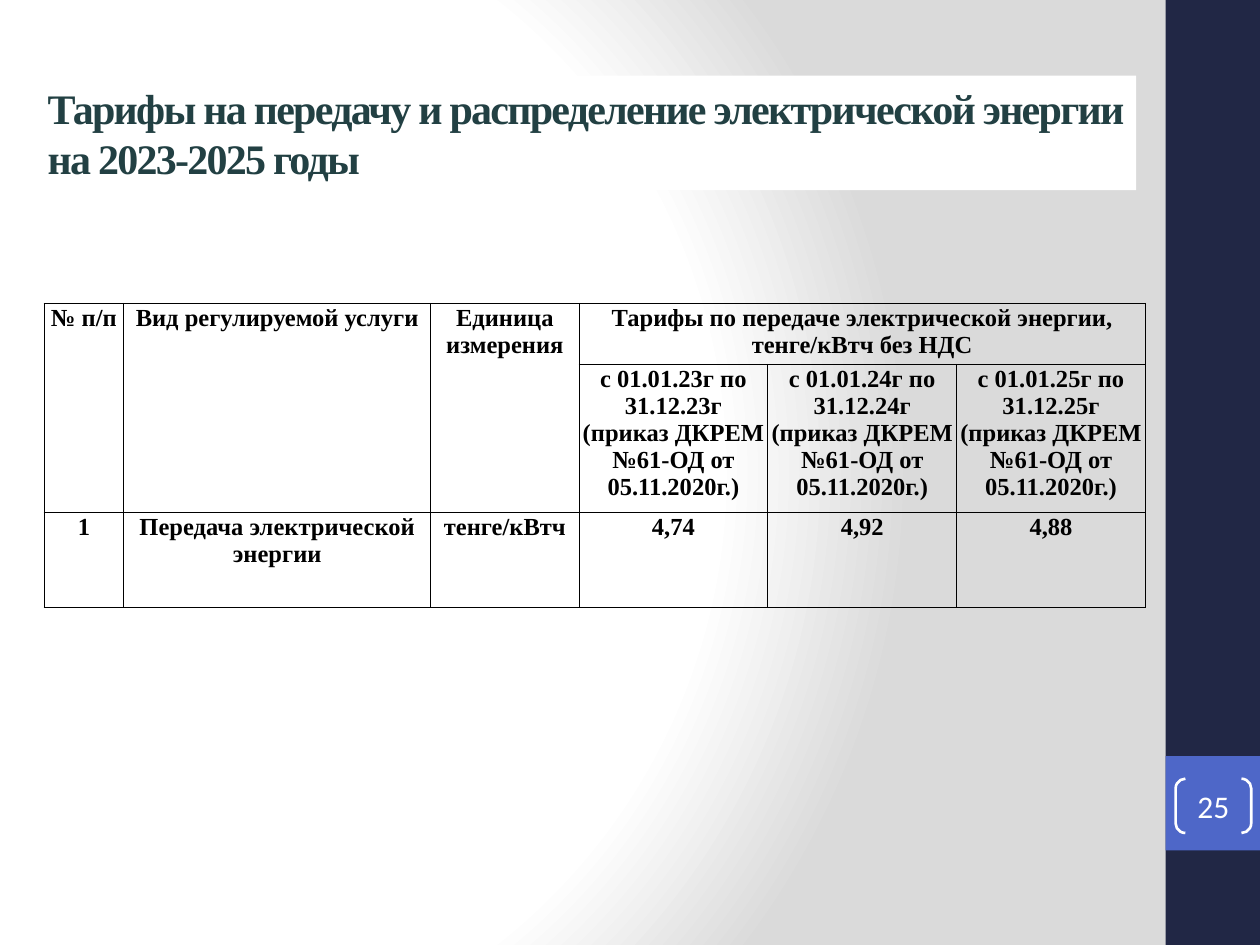
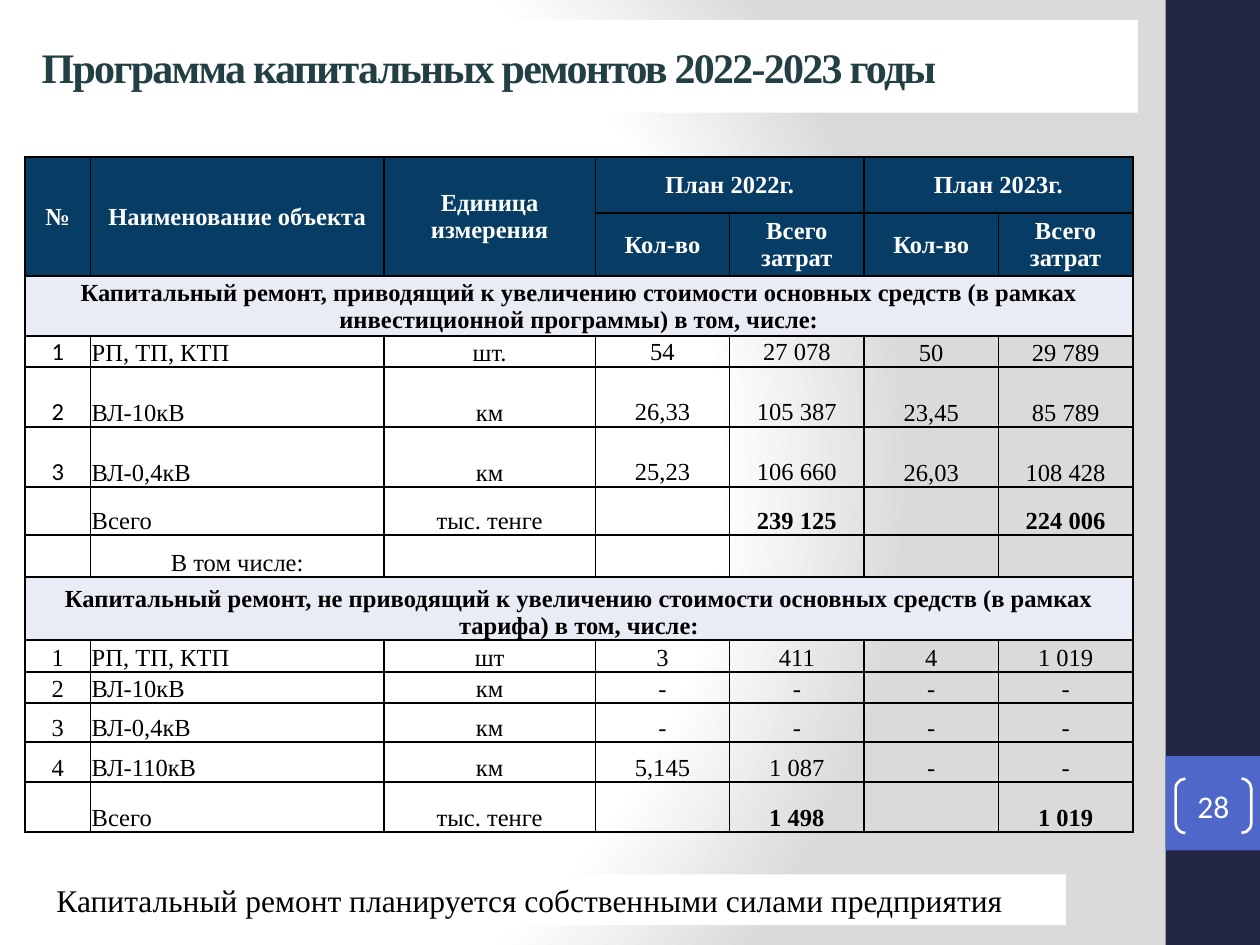
from dataclasses import dataclass

from lxml import etree
from pptx import Presentation
from pptx.dml.color import RGBColor
from pptx.enum.shapes import MSO_SHAPE as Shape
from pptx.enum.text import MSO_ANCHOR as Anchor, MSO_AUTO_SIZE as AutoSize, PP_ALIGN as Align
from pptx.oxml import parse_xml
from pptx.oxml.ns import nsdecls, qn
from pptx.util import Pt


@dataclass(frozen=True)
class Theme:
    serif: str = "Times New Roman"
    sans: str = "Calibri"
    title_size: int = 24
    note_size: int = 18
    table_size: int = 14
    white: str = "FFFFFF"
    black: str = "000000"
    grey: str = "DADADA"
    title: str = "224043"
    band: str = "212745"
    badge: str = "4E67C8"
    header: str = "073C65"
    section: str = "E9EBF5"


THEME = Theme()
TITLE_ONLY = 5


def apply(target, **values):
    for name, value in values.items():
        setattr(target, name, value)


def write(frame, text, size, color=THEME.black, font=THEME.serif, bold=False, align=Align.LEFT):
    para = frame.paragraphs[0]
    para.alignment = align
    span = para.add_run()
    span.text = text
    apply(span.font, name=font, size=Pt(size), bold=bold)
    span.font.color.rgb = RGBColor.from_string(color)
    return span


def paint(shape, color):
    shape.fill.solid()
    shape.fill.fore_color.rgb = RGBColor.from_string(color)


def place(shape, box):
    apply(shape, **dict(zip(("left", "top", "width", "height"), map(Pt, box))))


def set_background(master):
    """Give the master a circular gradient, white fading to grey on the right."""
    master.background.fill.solid()
    holder = master.element.find(".//" + qn("p:bgPr"))
    stops = ((0, THEME.white), (75, THEME.white), (100, THEME.grey))
    stop_xml = "".join(
        f'<a:gs pos="{position * 1000}"><a:srgbClr val="{color}"/></a:gs>'
        for position, color in stops)
    holder.replace(holder[0], parse_xml(
        f'<a:gradFill {nsdecls("a")} rotWithShape="1"><a:gsLst>{stop_xml}</a:gsLst>'
        '<a:path path="circle"><a:fillToRect l="20000" t="50000" r="100000" b="50000"/>'
        '</a:path></a:gradFill>'))


def add_side_band(page, number, box=(666, 0, 54, 540)):
    left, top, width, height = box
    badge_top = top + 0.8 * height
    for color, part in ((THEME.band, box), (THEME.badge, (left, badge_top, width, width))):
        panel = page.shapes.add_shape(Shape.RECTANGLE, *map(Pt, part))
        panel.shadow.inherit = False
        panel.line.fill.background()
        paint(panel, color)
    bracket = page.shapes.add_shape(
        Shape.DOUBLE_BRACKET, Pt(left + 5.8), Pt(badge_top + 13), Pt(43.2), Pt(31))
    bracket.shadow.inherit = False
    bracket.adjustments[0] = 0.18
    bracket.fill.background()
    bracket.line.color.rgb = RGBColor.from_string(THEME.white)
    bracket.line.width = Pt(1.5)
    frame = bracket.text_frame
    apply(frame, margin_left=0, margin_right=0, margin_top=0, margin_bottom=0,
          vertical_anchor=Anchor.MIDDLE)
    write(frame, number, THEME.note_size, THEME.white, THEME.sans, align=Align.CENTER)


def start_page(deck, title, title_box, number):
    page = deck.slides.add_slide(deck.slide_layouts[TITLE_ONLY])
    heading = page.shapes.title
    place(heading, title_box)
    paint(heading, THEME.white)
    apply(heading.text_frame, word_wrap=True, auto_size=AutoSize.NONE,
          vertical_anchor=Anchor.MIDDLE)
    span = write(heading.text_frame, title, THEME.title_size, THEME.title, bold=True)
    span.font._element.set("spc", "-100")
    add_side_band(page, number)
    return page


def add_borders(cell, width):
    properties = cell._tc.get_or_add_tcPr()
    for index, side in enumerate(("lnL", "lnR", "lnT", "lnB")):
        line = etree.Element(qn(f"a:{side}"), w=str(Pt(width)))
        fill = etree.SubElement(line, qn("a:solidFill"))
        etree.SubElement(fill, qn("a:srgbClr"), val=THEME.black)
        properties.insert(index, line)


def add_grid(page, corner, columns, heights, records, spans, border, style_of):
    """Draw a bordered table; style_of(row, column) gives each cell's format values."""
    box = (*corner, sum(columns), sum(heights))
    table = page.shapes.add_table(len(heights), len(columns), *map(Pt, box)).table
    apply(table, first_row=False, horz_banding=False)
    for column, width in zip(table.columns, columns):
        column.width = Pt(width)
    for row, height in zip(table.rows, heights):
        row.height = Pt(height)
    for r, record in enumerate(records):
        for c, text in enumerate(record):
            cell = table.cell(r, c)
            style = {"align": Align.CENTER, **style_of(r, c)}
            apply(cell, margin_left=Pt(0.72), margin_right=Pt(0.72), margin_bottom=0,
                  margin_top=Pt(style.pop("inset", 0.72)),
                  vertical_anchor=style.pop("anchor", Anchor.TOP))
            fill = style.pop("fill", None)
            if fill:
                paint(cell, fill)
            else:
                cell.fill.background()
            add_borders(cell, border)
            if text:
                write(cell.text_frame, text, THEME.table_size, **style)
    for top, left, bottom, right in spans:
        table.cell(top, left).merge(table.cell(bottom, right))


def build_tariffs(deck):
    page = start_page(
        deck, "Тарифы на передачу и распределение электрической энергии на 2023-2025 годы",
        (20, 43.2, 629.3, 65.5), "25")
    periods = [f"с 01.01.{year}г по 31.12.{year}г (приказ ДКРЕМ №61-ОД от 05.11.2020г.)"
               for year in (23, 24, 25)]
    records = [
        ["№ п/п", "Вид регулируемой услуги", "Единица измерения",
         "Тарифы по передаче электрической энергии, тенге/кВтч без НДС", "", ""],
        ["", "", "", *periods],
        ["1", "Передача электрической энергии", "тенге/кВтч", "4,74", "4,92", "4,88"],
    ]
    spans = [(0, column, 1, column) for column in range(3)] + [(0, 3, 0, 5)]
    add_grid(page, (25.2, 173.3), [45.5, 175.5, 84.7] + [107.9] * 3, [34.8, 84.5, 54.4],
             records, spans, 0.5, lambda row, column: {"bold": True})


def repair_style(row, column):
    """Format values for one cell of the repair programme."""
    if row < 2:
        return {"fill": THEME.header, "color": THEME.white, "bold": True,
                "anchor": Anchor.MIDDLE}
    if row in (2, 8):
        return {"fill": THEME.section, "bold": True,
                "anchor": Anchor.MIDDLE if row == 2 else Anchor.BOTTOM}
    style = {"anchor": Anchor.BOTTOM}
    if column == 1 and row != 7:
        style["align"] = Align.LEFT
    if row in (6, 13) and column > 2:
        style["bold"] = True
    if row in (3, 4, 5):
        if column == 0:
            style["font"] = THEME.sans
        if column in (3, 4):
            style["anchor"] = Anchor.MIDDLE
            if row > 3:
                style["inset"] = 16.8
    return style


def add_note(page, text, box):
    note = page.shapes.add_textbox(*map(Pt, box))
    paint(note, THEME.white)
    note.text_frame.word_wrap = True
    write(note.text_frame, text, THEME.note_size)


def build_repairs(deck):
    page = start_page(deck, "Программа капитальных ремонтов 2022-2023 годы",
                      (16.6, 11.4, 633.6, 53), "28")
    blank = [""] * 6
    records = [
        ["№", "Наименование объекта", "Единица измерения", "План 2022г.", "", "План 2023г.", ""],
        ["", "", ""] + ["Кол-во", "Всего затрат"] * 2,
        ["Капитальный ремонт, приводящий к увеличению стоимости основных средств "
         "(в рамках инвестиционной программы) в том, числе:", *blank],
        ["1", "РП, ТП, КТП", "шт.", "54", "27 078", "50", "29 789"],
        ["2", "ВЛ-10кВ", "км", "26,33", "105 387", "23,45", "85 789"],
        ["3", "ВЛ-0,4кВ", "км", "25,23", "106 660", "26,03", "108 428"],
        ["", "Всего", "тыс. тенге", "", "239 125", "", "224 006"],
        ["", "В том числе:", "", "", "", "", ""],
        ["Капитальный ремонт, не приводящий к увеличению стоимости основных средств "
         "(в рамках тарифа) в том, числе:", *blank],
        ["1", "РП, ТП, КТП", "шт", "3", "411", "4", "1 019"],
        ["2", "ВЛ-10кВ", "км", "-", "-", "-", "-"],
        ["3", "ВЛ-0,4кВ", "км", "-", "-", "-", "-"],
        ["4", "ВЛ-110кВ", "км", "5,145", "1 087", "-", "-"],
        ["", "Всего", "тыс. тенге", "", "1 498", "", "1 019"],
    ]
    spans = [(0, column, 1, column) for column in range(3)]
    spans += [(0, 3, 0, 4), (0, 5, 0, 6), (2, 0, 2, 6), (8, 0, 8, 6)]
    heights = [32, 36, 34.3, 17.7, 34.3, 34.3, 27.4, 24, 36, 18.3, 17.7, 22.4, 22.8, 28.6]
    add_grid(page, (14.4, 89.7), [37.3, 167.8, 120.7] + [76.8] * 4, heights,
             records, spans, 1, repair_style)
    add_note(page, "Капитальный ремонт планируется собственными силами предприятия",
             (25.2, 499.7, 584, 29))


def main():
    deck = Presentation()
    apply(deck, slide_width=Pt(720), slide_height=Pt(540))
    set_background(deck.slide_master)
    build_tariffs(deck)
    build_repairs(deck)
    deck.save("out.pptx")


if __name__ == "__main__":
    main()
